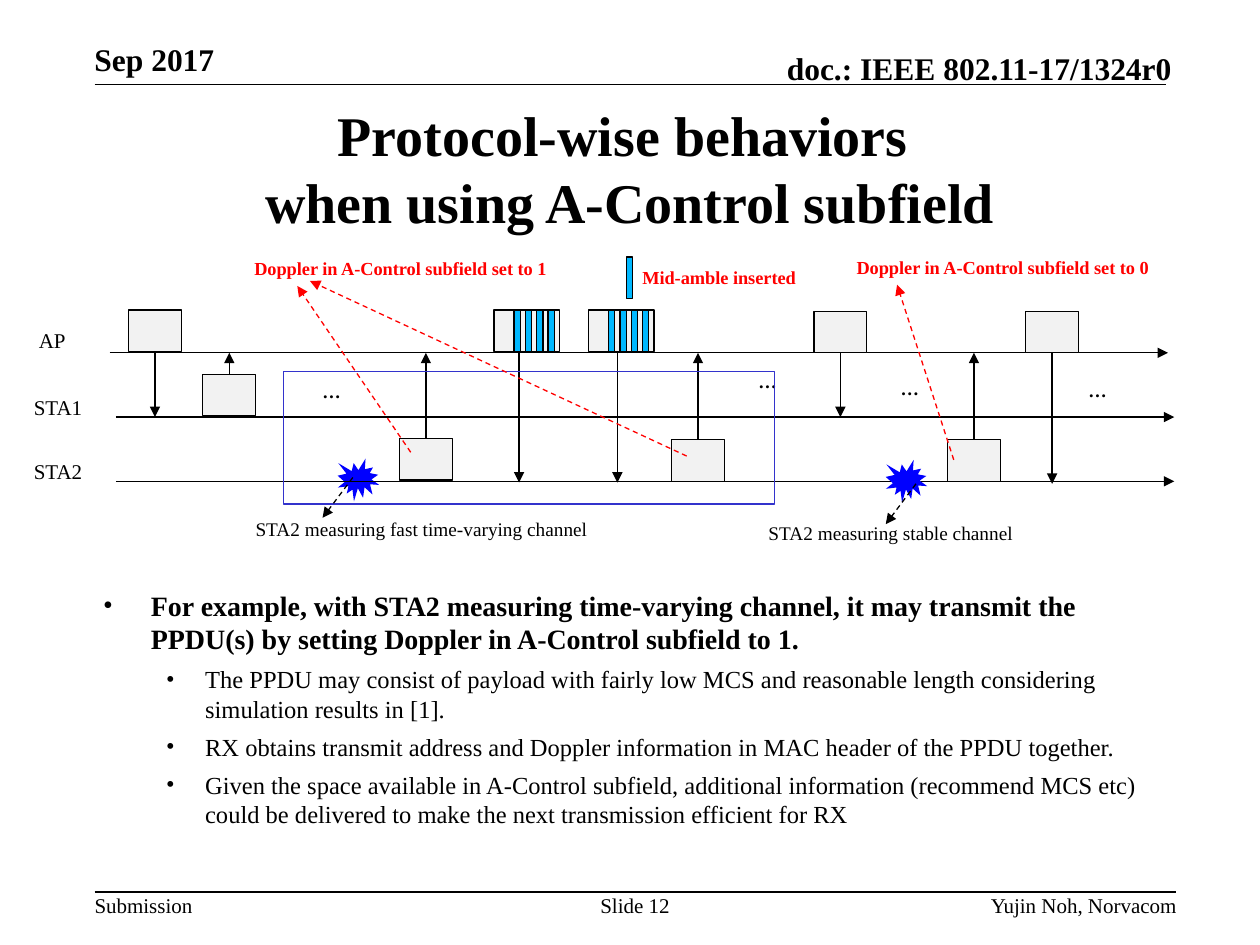
from lxml.etree import SubElement
from pptx import Presentation
from pptx.dml.color import RGBColor
from pptx.enum.dml import MSO_LINE
from pptx.enum.shapes import MSO_CONNECTOR, MSO_SHAPE
from pptx.enum.text import MSO_ANCHOR as ANCHOR, PP_ALIGN as ALIGN
from pptx.oxml.ns import qn
from pptx.util import Inches, Pt

FONT = "Times New Roman"
COLORS = {"ink": "000000", "alert": "FF0000", "ppdu": "F2F2F2",
          "midamble": "00B8FF", "burst": "0000FF", "frame": "3333CC"}
INSETS = (0.1, 0.05, 0.1, 0.05)
PPDU_W, PPDU_H = 0.42, 0.33
AP_Y, STA1_Y, STA2_Y = 2.8, 3.31, 3.82


def rgb(name):
    """Return the palette colour with this name."""
    return RGBColor.from_string(COLORS[name])


def style_paragraph(p, text, size, color="ink", bold=False, align=ALIGN.LEFT):
    """Fill a paragraph with formatted text."""
    p.text = text
    p.alignment = align
    for r in p.runs:
        r.font.name, r.font.size, r.font.bold = FONT, Pt(size), bold
        r.font.color.rgb = rgb(color)


def add_frame(s, box, insets=INSETS, anchor=ANCHOR.TOP, wrap=True):
    """Add an empty text box and return its text frame."""
    tf = s.shapes.add_textbox(*map(Inches, box)).text_frame
    tf.word_wrap, tf.vertical_anchor = wrap, anchor
    tf.margin_left, tf.margin_top, tf.margin_right, tf.margin_bottom = map(Inches, insets)
    return tf


def add_text(s, text, box, size=12, color="ink", bold=False, align=ALIGN.LEFT, **frame):
    """Add a text box holding one paragraph."""
    tf = add_frame(s, box, **frame)
    style_paragraph(tf.paragraphs[0], text, size, color, bold, align)


def add_block(s, box, fill=None, line=None, kind=MSO_SHAPE.RECTANGLE):
    """Add a preset shape with optional fill and outline."""
    sp = s.shapes.add_shape(kind, *map(Inches, box))
    sp.shadow.inherit = False
    if fill:
        sp.fill.solid()
        sp.fill.fore_color.rgb = rgb(fill)
    else:
        sp.fill.background()
    if line:
        sp.line.color.rgb = rgb(line)
        sp.line.width = Pt(0.75)
    else:
        sp.line.fill.background()
    return sp


def add_line(s, start, end, color="ink", width=0.75, dash=False, arrow=True):
    """Add a straight connector, by default with an arrowhead at its end."""
    line = s.shapes.add_connector(MSO_CONNECTOR.STRAIGHT, *map(Inches, (*start, *end)))
    line.line.color.rgb = rgb(color)
    line.line.width = Pt(width)
    if dash:
        line.line.dash_style = MSO_LINE.DASH
    if arrow:
        SubElement(line.line._get_or_add_ln(), qn("a:tailEnd"), type="triangle")
    SubElement(line._element.spPr, qn("a:effectLst"))
    return line


def add_ppdu(s, x, y, target):
    """Add a PPDU block and the arrow from it to the receiving lane."""
    sp = add_block(s, (x, y, PPDU_W, PPDU_H), "ppdu", "ink")
    down = target > y
    center = x + PPDU_W / 2
    line = add_line(s, (center, y + PPDU_H * down), (center, target))
    line.begin_connect(sp, 2 if down else 0)


def add_midamble(s, x, y=2.46):
    """Add one mid-amble bar."""
    add_block(s, (x, y, 0.05, PPDU_H), "midamble", "ink")


def add_midamble_ppdu(s, x, first_bar, arrow_x):
    """Add a PPDU with four mid-ambles and its arrow to STA2."""
    add_block(s, (x, 2.46, 0.52, PPDU_H), "ppdu", "ink")
    for i in range(4):
        add_midamble(s, first_bar + 0.09 * i)
    add_line(s, (arrow_x, AP_Y), (arrow_x, 3.83))


def add_burst(s, x, y):
    """Add a channel measurement mark."""
    add_block(s, (x, y, 0.33, 0.34), "burst", kind=MSO_SHAPE.EXPLOSION1)


def add_bullets(s, box, items):
    """Add a bulleted list of (level, text) items."""
    tf = add_frame(s, box)
    for i, (level, text) in enumerate(items):
        p = tf.add_paragraph() if i else tf.paragraphs[0]
        style_paragraph(p, text, 14 if level else 16, bold=not level)
        p.level, p.space_before = level, Pt(5 if level else 6)
        left, hang = (0.81, 0.31) if level else (0.38, 0.38)
        pPr = p._p.get_or_add_pPr()
        pPr.set("marL", str(Inches(left)))
        pPr.set("indent", str(-Inches(hang)))
        SubElement(pPr, qn("a:buFont"), typeface=FONT)
        SubElement(pPr, qn("a:buChar"), char="•")


def add_header_footer(s):
    """Add the rules, header and footer texts."""
    flush = dict(insets=(0, 0, 0, 0))
    header = dict(size=18, bold=True, anchor=ANCHOR.BOTTOM, **flush)
    add_line(s, (0.75, 0.67), (9.25, 0.67), width=1, arrow=False)
    add_line(s, (0.75, 7.08), (9.33, 7.08), width=1, arrow=False)
    add_text(s, "Sep 2017", (0.75, 0.32, 3.83, 0.3), **header)
    add_text(s, "doc.: IEEE 802.11-17/1324r0", (5.47, 0.39, 3.83, 0.3),
             align=ALIGN.RIGHT, **header)
    add_text(s, "Submission", (0.75, 7.08, 0.78, 0.2), wrap=False, **flush)
    add_text(s, "Slide 12", (4.75, 7.08, 0.58, 0.4), align=ALIGN.CENTER, **flush)
    add_text(s, "Yujin Noh, Norvacom", (5.86, 7.08, 3.48, 0.2), align=ALIGN.RIGHT, **flush)


def add_sequence(s):
    """Add the frame exchange between AP, STA1 and STA2."""
    add_burst(s, 2.68, 3.64)
    for name, label_x, label_y, x, y in (("AP", 0.21, 2.55, 0.87, AP_Y),
                                         ("STA1", 0.17, 3.08, 0.92, STA1_Y),
                                         ("STA2", 0.17, 3.59, 0.92, STA2_Y)):
        add_text(s, name, (label_x, label_y, 0.59, 0.3))
        add_line(s, (x, y), (x + 8.4, y))
    add_burst(s, 7.03, 3.65)
    for x, y, target in ((1.02, 2.46, STA1_Y), (1.61, 2.97, AP_Y), (3.17, 3.48, AP_Y),
                         (5.33, 3.49, AP_Y), (6.46, 2.47, STA1_Y), (7.52, 3.49, AP_Y),
                         (8.14, 2.47, 3.84)):
        add_ppdu(s, x, y, target)
    add_midamble_ppdu(s, 3.92, 4.08, 4.12)
    add_midamble_ppdu(s, 4.67, 4.83, 4.9)
    add_midamble(s, 4.97, 2.04)
    for x, y in ((2.46, 2.97), (5.92, 2.89), (7.05, 2.94), (8.54, 2.96)):
        add_text(s, "…", (x, y, 0.27, 0.29), size=10.5, bold=True)
    add_block(s, (2.25, 2.95, 3.9, 1.05), line="frame")


def add_callouts(s):
    """Add the notes around the sequence and their dashed pointers."""
    for text, box in (("Doppler in A-Control subfield set to 1", (1.92, 1.99, 2.61, 0.28)),
                      ("Doppler in A-Control subfield set to 0", (6.7, 1.98, 2.61, 0.28)),
                      ("Mid-amble inserted", (5, 2.06, 1.44, 0.28))):
        add_text(s, text, box, size=10.5, color="alert", bold=True, wrap=False)
    for text, box in (("STA2 measuring fast time-varying channel", (1.93, 4.06, 2.97, 0.29)),
                      ("STA2 measuring stable channel", (6, 4.09, 3.55, 0.29))):
        add_text(s, text, box, size=11)
    for start, end, color in (((3.26, 3.59), (2.36, 2.27), "alert"),
                              ((5.45, 3.62), (2.46, 2.23), "alert"),
                              ((7.57, 3.65), (7.12, 2.26), "alert"),
                              ((2.8, 3.79), (2.56, 4.11), "ink"),
                              ((7.27, 3.84), (7.03, 4.16), "ink")):
        add_line(s, start, end, color, dash=True)


def main():
    """Build the slide and save it."""
    prs = Presentation()
    prs.slide_width, prs.slide_height = Inches(10), Inches(7.5)
    s = prs.slides.add_slide(prs.slide_layouts[6])
    add_header_footer(s)
    add_text(s, "Protocol-wise behaviors \vwhen using A-Control subfield",
             (0.75, 0.75, 8.5, 1.16), size=32, bold=True,
             align=ALIGN.CENTER, anchor=ANCHOR.MIDDLE)
    add_sequence(s)
    add_callouts(s)
    add_bullets(s, (0.72, 4.62, 8.5, 2.25), (
        (0, "For example, with STA2 measuring time-varying channel, it may transmit the "
            "PPDU(s) by setting Doppler in A-Control subfield to 1."),
        (1, "The PPDU may consist of payload with fairly low MCS and reasonable length "
            "considering simulation results in [1]."),
        (1, "RX obtains transmit address and Doppler information in MAC header of the "
            "PPDU together."),
        (1, "Given the space available in A-Control subfield, additional information "
            "(recommend MCS etc) could be delivered to make the next transmission "
            "efficient for RX")))
    prs.save("out.pptx")


if __name__ == "__main__":
    main()
